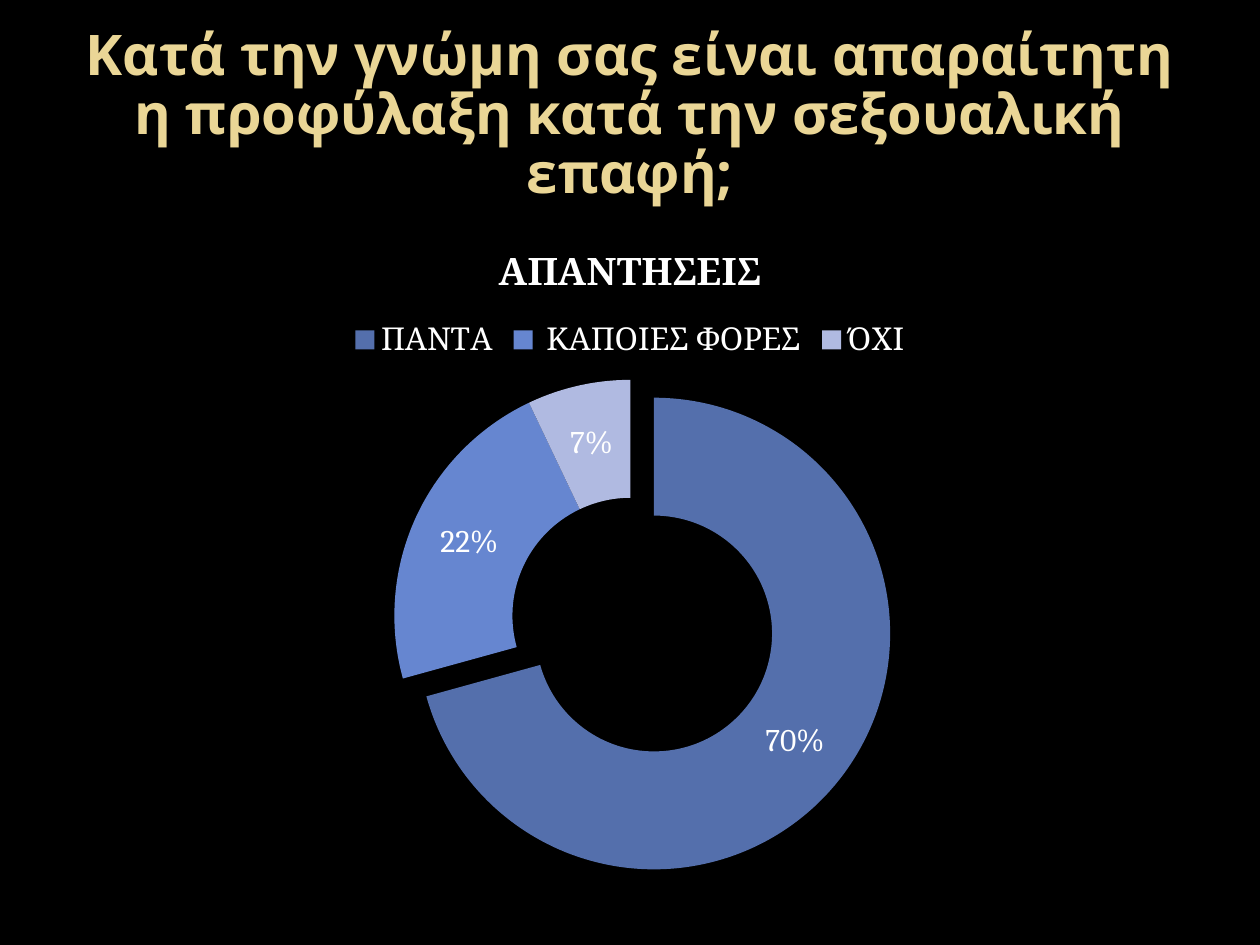
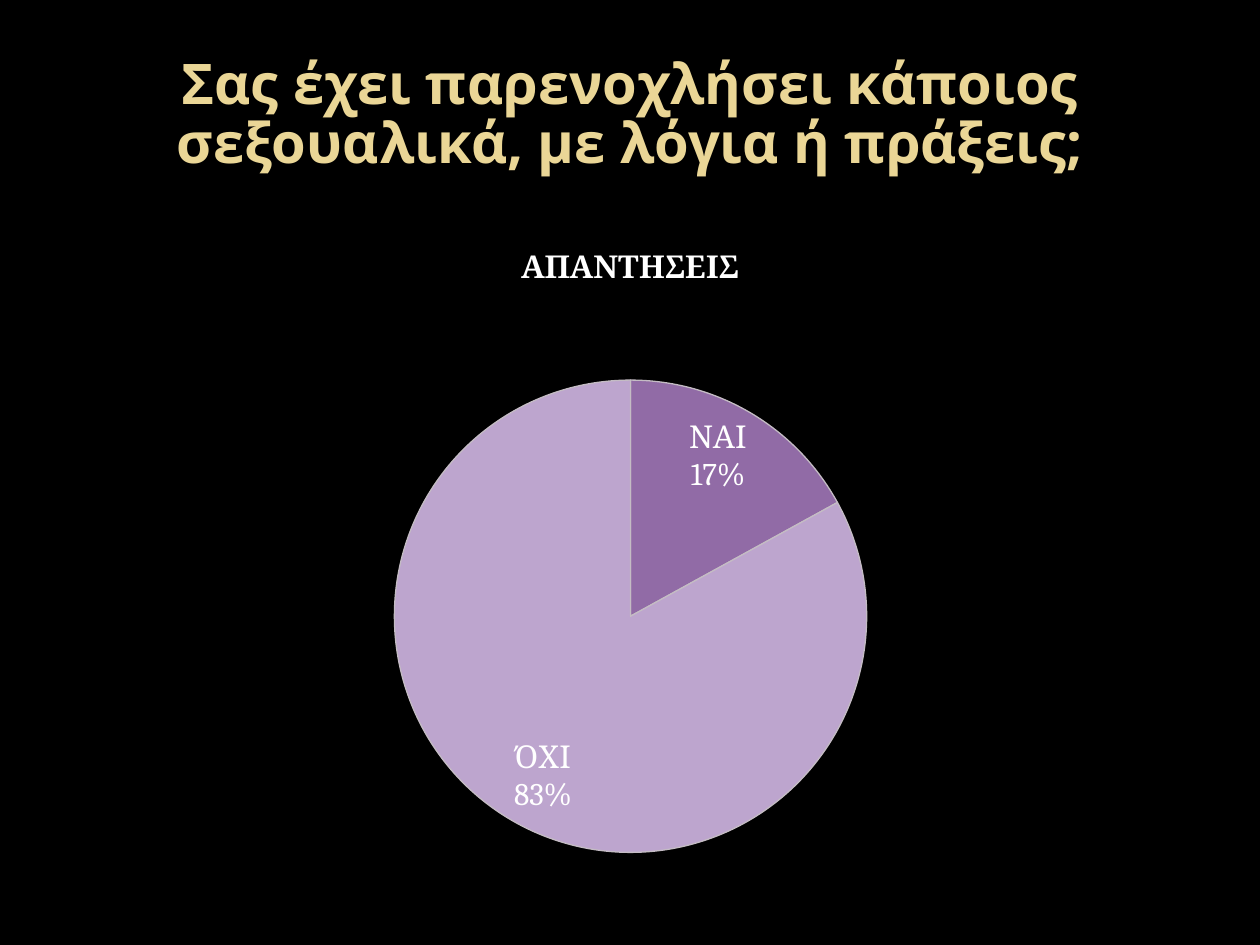
from lxml import etree
from pptx import Presentation
from pptx.chart.data import CategoryChartData
from pptx.dml.color import RGBColor
from pptx.enum.chart import XL_CHART_TYPE as ChartType
from pptx.enum.chart import XL_LABEL_POSITION as LabelPosition
from pptx.enum.chart import XL_LEGEND_POSITION as LegendPosition
from pptx.enum.text import MSO_ANCHOR, PP_ALIGN
from pptx.oxml.ns import qn
from pptx.util import Inches, Pt

SERIES = "ΑΠΑΝΤΗΣΕΙΣ"
QUESTIONS = [
    {
        "title": "Κατά την γνώμη σας είναι απαραίτητη η προφύλαξη κατά την σεξουαλική επαφή;",
        "type": ChartType.DOUGHNUT,
        "answers": [("ΠΑΝΤΑ", 70, "546FAC"), (" ΚΑΠΟΙΕΣ ΦΟΡΕΣ", 22, "6686D0"),
                    ("ΌΧΙ", 7, "B0BAE1")],
        "heading_size": 21.6,
        "legend": True,
        "explosion": 25,
    },
    {
        "title": "Σας έχει παρενοχλήσει κάποιος σεξουαλικά, με λόγια ή πράξεις;",
        "type": ChartType.PIE,
        "answers": [("ΝΑΙ", 17, "916BA6"), ("ΌΧΙ", 83, "BDA5CE")],
        "heading_size": 18,
        "legend": False,
        "outline": "C4BCC4",
    },
]

BACKGROUND, TITLE_COLOR, CHART_TEXT = "000000", "EAD696", "FFFFFF"
TITLE_FONT, CHART_FONT = "Noto Sans", "Cambria"
WIDTH, HEIGHT = 10, 7.5
MARGIN = 0.5
CONTENT_WIDTH = WIDTH - 2 * MARGIN
TITLE_TOP, TITLE_HEIGHT = 0.3, 1.25
CHART_TOP, CHART_HEIGHT = 1.75, 5.15
DIAMETER = 3.75
CENTER_Y = 0.61  # share of the chart's height


def color(hex_code):
    return RGBColor.from_string(hex_code)


def add_title(page, text):
    box = page.shapes.add_textbox(Inches(MARGIN), Inches(TITLE_TOP),
                                  Inches(CONTENT_WIDTH), Inches(TITLE_HEIGHT))
    frame = box.text_frame
    frame.word_wrap = True
    frame.vertical_anchor = MSO_ANCHOR.MIDDLE
    para = frame.paragraphs[0]
    para.alignment = PP_ALIGN.CENTER
    para.line_spacing = 0.88
    span = para.add_run()
    span.text = text
    span.font.name, span.font.size, span.font.bold = TITLE_FONT, Pt(32), True
    span.font.color.rgb = color(TITLE_COLOR)


def place_plot(chart):
    """Fix the circle's square inside the chart frame."""
    plot_area = chart.plots[0]._element.getparent()
    layout = plot_area.find(qn("c:layout"))
    if layout is None:
        layout = etree.Element(qn("c:layout"))
        plot_area.insert(0, layout)
    manual = etree.SubElement(layout, qn("c:manualLayout"))
    width, height = DIAMETER / CONTENT_WIDTH, DIAMETER / CHART_HEIGHT
    settings = {"layoutTarget": "inner", "xMode": "edge", "yMode": "edge",
                "x": 0.5 - width / 2, "y": CENTER_Y - height / 2,
                "w": width, "h": height}
    for name, value in settings.items():
        text = value if isinstance(value, str) else f"{value:.3f}"
        etree.SubElement(manual, qn(f"c:{name}"), val=text)


def add_heading(chart, size):
    chart.has_title = True
    span = chart.chart_title.text_frame.paragraphs[0].add_run()
    span.text = SERIES
    span.font.name, span.font.size, span.font.bold = CHART_FONT, Pt(size), True
    span.font.color.rgb = color(CHART_TEXT)


def style_slices(series, question):
    for index, (_, _, fill) in enumerate(question["answers"]):
        look = series.points[index].format
        look.fill.solid()
        look.fill.fore_color.rgb = color(fill)
        if "outline" in question:
            look.line.color.rgb = color(question["outline"])
            look.line.width = Pt(0.75)
        else:
            look.line.fill.background()
    if "explosion" in question:
        first = series._element.find(qn("c:dPt"))
        explosion = etree.Element(qn("c:explosion"), val=str(question["explosion"]))
        first.find(qn("c:spPr")).addprevious(explosion)


def add_labels(series, is_pie):
    labels = series.data_labels
    labels.font.name, labels.font.size = CHART_FONT, Pt(18)
    labels.font.color.rgb = color(CHART_TEXT)
    labels.show_value = not is_pie
    labels.show_percentage = labels.show_category_name = is_pie
    if is_pie:
        labels.position = LabelPosition.INSIDE_END
        separator = etree.Element(qn("c:separator"))
        separator.text = "\n"
        labels._element.find(qn("c:showBubbleSize")).addnext(separator)
    else:
        labels.number_format = '0"%"'
        labels.number_format_is_linked = False


def add_answers(page, question):
    data = CategoryChartData()
    data.categories = [name for name, _, _ in question["answers"]]
    data.add_series(SERIES, [value for _, value, _ in question["answers"]])
    chart = page.shapes.add_chart(
        question["type"], Inches(MARGIN), Inches(CHART_TOP),
        Inches(CONTENT_WIDTH), Inches(CHART_HEIGHT), data).chart
    chart.font.name, chart.font.size = CHART_FONT, Pt(18)
    chart.font.color.rgb = color(CHART_TEXT)
    add_heading(chart, question["heading_size"])
    chart.has_legend = question["legend"]
    if chart.has_legend:
        chart.legend.position = LegendPosition.TOP
        chart.legend.include_in_layout = False
    plot = chart.plots[0]
    plot.vary_by_categories = True
    style_slices(plot.series[0], question)
    add_labels(plot.series[0], question["type"] == ChartType.PIE)
    place_plot(chart)


def main():
    deck = Presentation()
    deck.slide_width, deck.slide_height = Inches(WIDTH), Inches(HEIGHT)
    for question in QUESTIONS:
        page = deck.slides.add_slide(deck.slide_layouts[6])
        page.background.fill.solid()
        page.background.fill.fore_color.rgb = color(BACKGROUND)
        add_title(page, question["title"])
        add_answers(page, question)
    deck.save("out.pptx")


if __name__ == "__main__":
    main()
